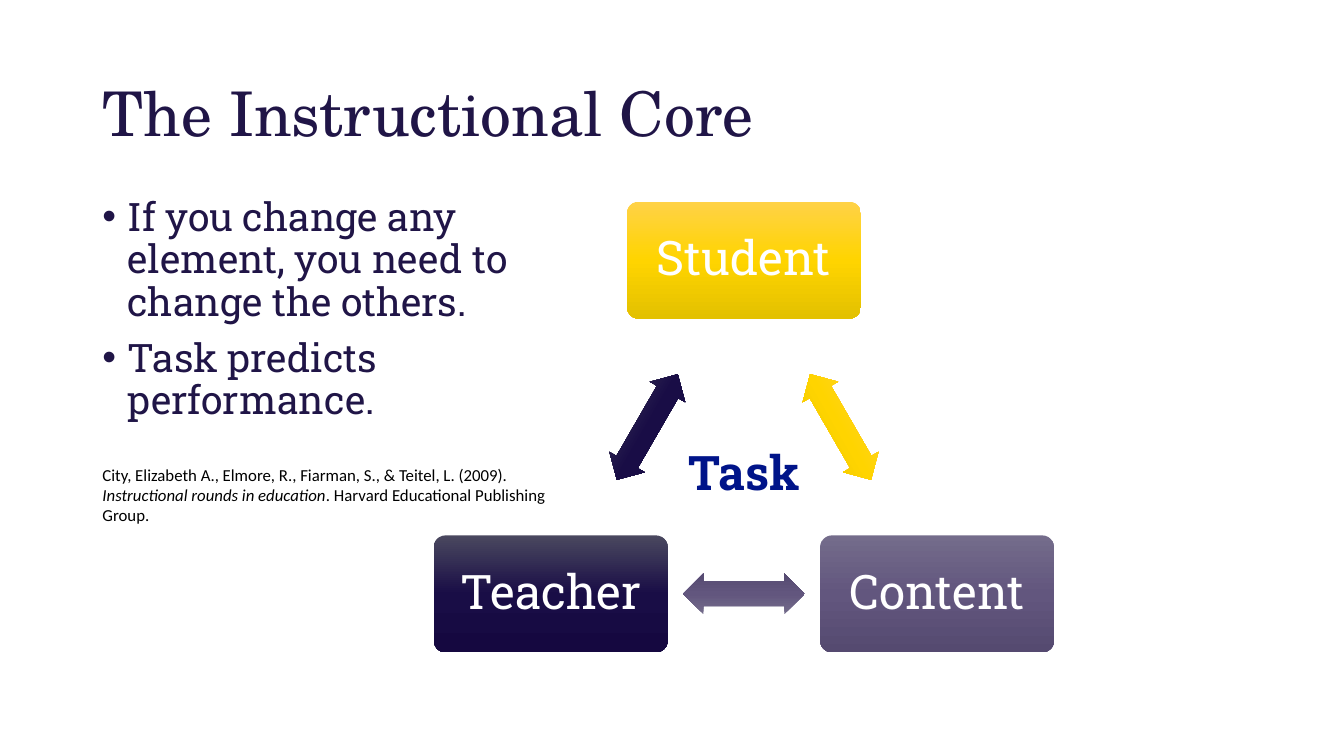
"""Build the Instructional Core slide: key points beside a triangle of linked roles."""
from copy import deepcopy

from lxml.etree import SubElement
from pptx import Presentation
from pptx.dml.color import RGBColor
from pptx.enum.shapes import MSO_SHAPE
from pptx.enum.text import MSO_ANCHOR, MSO_AUTO_SIZE, PP_ALIGN
from pptx.oxml.ns import qn
from pptx.util import Pt

COLORS = {
    "text": "201547", "task": "001489", "citation": "000000", "label": "FFFFFF",
    "Student": ("FFD247", "FFD400", "E3C100"),
    "Content": ("746C8B", "62567E", "554A70"),
    "Teacher": ("4A485F", "190D46", "150840"),
}
FORMATS = {
    "title": {"name": "TeX Gyre Schola", "size": Pt(44)},
    "text": {"name": "Roboto Slab", "size": Pt(28)},
    "label": {"name": "Roboto Slab", "size": Pt(34)},
    "task": {"name": "Roboto Slab", "size": Pt(34), "bold": True},
    "citation": {"name": "Calibri", "size": Pt(12)},
}


def add_span(para, text, style, color, italic=None):
    span = para.add_run()
    span.text = text
    for name, value in FORMATS[style].items():
        setattr(span.font, name, value)
    span.font.italic = italic
    span.font.color.rgb = RGBColor.from_string(COLORS[color])


def add_gradient_shape(kind, center, size, adjustments, colors):
    (x, y), (width, height) = center, size
    shape = page.shapes.add_shape(
        kind, Pt(x - width / 2), Pt(y - height / 2), Pt(width), Pt(height))
    shape.shadow.inherit = False
    shape.line.fill.background()
    for index, value in enumerate(adjustments):
        shape.adjustments[index] = value
    shape.fill.gradient()
    shape.fill.gradient_angle = 270
    stops = shape.element.spPr.find(".//" + qn("a:gsLst"))
    stops.insert(1, deepcopy(stops[0]))
    for index, stop in enumerate(shape.fill.gradient_stops):
        stop.position = index / 2
        stop.color.rgb = RGBColor.from_string(colors[index])
    return shape


deck = Presentation()
deck.slide_width, deck.slide_height = Pt(960), Pt(540)
page = deck.slides.add_slide(deck.slide_layouts[1])

title, body = page.placeholders
for holder, bounds, anchor in (
    (title, (66, 34, 737, 99), MSO_ANCHOR.MIDDLE),
    (body, (66, 137.5, 331, 396), MSO_ANCHOR.TOP),
):
    holder.left, holder.top, holder.width, holder.height = map(Pt, bounds)
    holder.text_frame.auto_size = MSO_AUTO_SIZE.NONE
    holder.text_frame.vertical_anchor = anchor

para = title.text_frame.paragraphs[0]
para.alignment = PP_ALIGN.LEFT
para.line_spacing = 0.9
add_span(para, "The Instructional Core", "title", "text")

points = (
    "If you change any element, you need to change the others.",
    "Task predicts performance.",
)
for index, point in enumerate(points):
    para = body.text_frame.add_paragraph() if index else body.text_frame.paragraphs[0]
    para.line_spacing = 0.9
    para.space_before = Pt(10 if index else 0)
    properties = para._p.get_or_add_pPr()
    properties.set("marL", str(Pt(18)))
    properties.set("indent", str(-Pt(18)))
    add_span(para, point, "text", "text")

para = body.text_frame.add_paragraph()
para.space_before = Pt(29.5)
properties = para._p.get_or_add_pPr()
properties.set("marL", "0")
properties.set("indent", "0")
SubElement(properties, qn("a:buNone"))
citation = (
    ("City, Elizabeth A., Elmore, R., Fiarman, S., & Teitel, L. (2009). ", False),
    ("Instructional rounds in education", True),
    (". Harvard Educational Publishing Group.", False),
)
for text, italic in citation:
    add_span(para, text, "citation", "citation", italic)

centers = {"Student": (531.4, 185.8), "Content": (669.4, 424.2), "Teacher": (393.4, 424.2)}
roles = list(centers)
for index, role in enumerate(roles):
    box = add_gradient_shape(
        MSO_SHAPE.ROUNDED_RECTANGLE, centers[role], (167, 83.5), (0.1,), COLORS[role])
    box.text_frame.vertical_anchor = MSO_ANCHOR.MIDDLE
    para = box.text_frame.paragraphs[0]
    para.alignment = PP_ALIGN.CENTER
    para.line_spacing = 0.9
    add_span(para, role, "label", "label")

    following = centers[roles[(index + 1) % len(roles)]]
    middle = [(start + end) / 2 for start, end in zip(centers[role], following)]
    arrow = add_gradient_shape(
        MSO_SHAPE.LEFT_RIGHT_ARROW, middle, (87, 29.2), (0.6, 0.5), COLORS[role])
    arrow.rotation = 60 + 120 * index

task = page.shapes.add_textbox(Pt(458), Pt(312.5), Pt(147.5), Pt(48))
task.text_frame.word_wrap = True
para = task.text_frame.paragraphs[0]
para.alignment = PP_ALIGN.CENTER
add_span(para, "Task", "task", "task")

deck.save("out.pptx")
